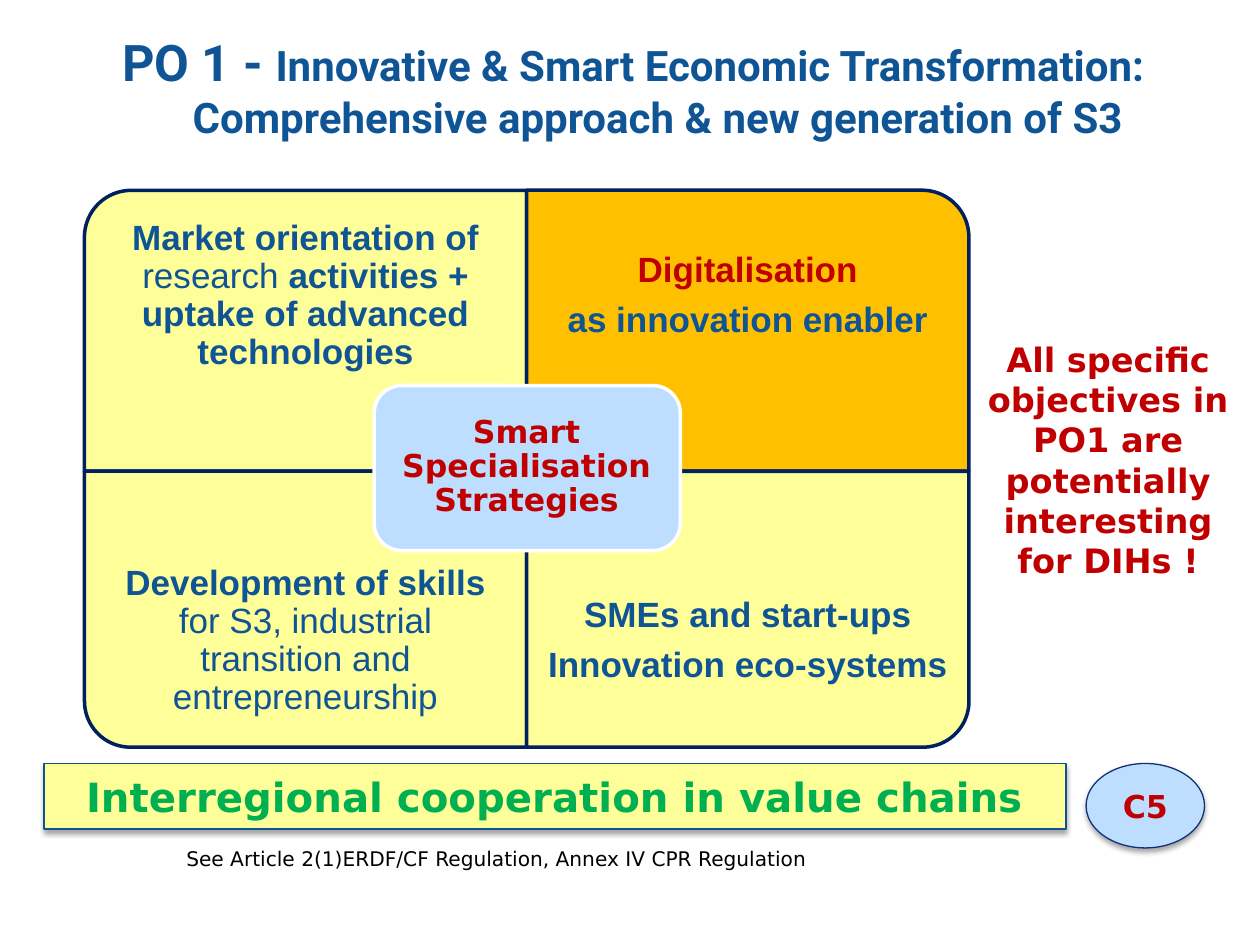
from lxml import etree
from pptx import Presentation
from pptx.dml.color import RGBColor
from pptx.enum.shapes import MSO_SHAPE
from pptx.enum.text import MSO_ANCHOR, MSO_AUTO_SIZE, PP_ALIGN
from pptx.oxml.ns import qn
from pptx.util import Inches, Pt

ROUND_ONE, ROUND = MSO_SHAPE.ROUND_1_RECTANGLE, MSO_SHAPE.ROUNDED_RECTANGLE
RECT, OVAL = MSO_SHAPE.RECTANGLE, MSO_SHAPE.OVAL
CENTER, LEFT = PP_ALIGN.CENTER, PP_ALIGN.LEFT
MIDDLE, TOP = MSO_ANCHOR.MIDDLE, MSO_ANCHOR.TOP

COLORS = {
    "blue": "0F5494", "navy": "002060", "indigo": "133176", "red": "C00000",
    "green": "00B050", "yellow": "FFFF99", "amber": "FFC000",
    "sky": "BDDEFF", "white": "FFFFFF", "black": "000000",
}

# A paragraph is a list of runs: (text, overrides of the box format).
PLAIN = {"bold": False}
TITLE = [[("PO 1 - ", {"size": 28.8}),
          ("Innovative & Smart Economic Transformation: "
           "Comprehensive approach & new generation of S3", {})]]
# column, row, rotation, fill, paragraphs
QUADRANTS = [
    (0, 0, 270, "yellow", [[("Market orientation of ", {}), ("research ", PLAIN),
                            ("activities + uptake of advanced technologies", {})]]),
    (1, 0, 0, "amber", [[("Digitalisation", {"color": "red"})],
                        [("as innovation enabler", {})]]),
    (0, 1, 180, "yellow", [[("Development of skills ", {}),
                            ("for S3, industrial transition and entrepreneurship", PLAIN)]]),
    (1, 1, 90, "yellow", [[("SMEs and start-ups", {})],
                          [("Innovation eco-systems", {})]]),
]
CORE = [[("Smart Specialisation Strategies", {})]]
BANNER = [[("Interregional cooperation in value chains", {})]]
BADGE = [[("C5", {})]]
SOURCE = [[("See Article 2(1)ERDF/CF Regulation, Annex IV CPR Regulation", {})]]
REMARK = [[("All specific objectives in PO1 are potentially interesting for DIHs !", {})]]

TITLE_FONT = {"name": "Roboto", "size": 24, "bold": True, "color": "blue"}
QUAD_FONT = {"name": "Arial", "size": 20, "bold": True, "color": "blue"}
RED_FONT = {"name": "DejaVu Sans", "size": 18, "bold": True, "color": "red"}
BANNER_FONT = {**RED_FONT, "size": 23, "color": "green"}
REMARK_FONT = {**RED_FONT, "size": 19.2}
SOURCE_FONT = {**RED_FONT, "size": 11.5, "bold": False, "color": "black"}

GRID_LEFT, GRID_TOP, CELL_W = 0.67, 1.51, 3.51
ROW_H = (2.23, 2.19)
LABEL_TOP, LABEL_H = (1.51, 4.27), (1.68, 1.64)


def rgb(name):
    return RGBColor.from_string(COLORS[name])


def write(tf, paragraphs, font, align=CENTER, anchor=MIDDLE, inset=None, tight=False):
    """Fill a text frame; tight gives 90 % lines and a gap of 35 % of the size."""
    tf.word_wrap = True
    tf.vertical_anchor = anchor
    if inset is not None:
        for side in ("left", "right", "top", "bottom"):
            setattr(tf, f"margin_{side}", Inches(inset))
    for i, runs in enumerate(paragraphs):
        p = tf.add_paragraph() if i else tf.paragraphs[0]
        p.alignment = align
        if tight:
            p.line_spacing = 0.9
            p.space_after = Pt(0.35 * font["size"])
        for text, overrides in runs:
            r = p.add_run()
            r.text = text
            fmt = {**font, **overrides}
            r.font.color.rgb = rgb(fmt.pop("color"))
            fmt["size"] = Pt(fmt["size"])
            for key, value in fmt.items():
                setattr(r.font, key, value)


def add_shape(s, kind, box, fill, line, width=2.0, rotation=0):
    sp = s.shapes.add_shape(kind, *map(Inches, box))
    sp.shadow.inherit = False
    sp.rotation = rotation
    sp.fill.solid()
    sp.fill.fore_color.rgb = rgb(fill)
    sp.line.color.rgb = rgb(line)
    sp.line.width = Pt(width)
    return sp


def add_text(s, box, paragraphs, font, **layout):
    write(s.shapes.add_textbox(*map(Inches, box)).text_frame, paragraphs, font, **layout)


def drop_shadow(sp):
    effects = sp._element.spPr.find(qn("a:effectLst"))
    shadow = etree.SubElement(effects, qn("a:outerShdw"), blurRad=str(Pt(3.1)),
                              dist=str(Pt(1.8)), dir="5400000", rotWithShape="0")
    color = etree.SubElement(shadow, qn("a:srgbClr"), val=COLORS["black"])
    etree.SubElement(color, qn("a:alpha"), val="35000")


def add_title(s):
    title = s.shapes.title
    title.left, title.top, title.width, title.height = map(Inches, (0.05, 0.16, 9.95, 1.05))
    write(title.text_frame, TITLE, TITLE_FONT)
    title.text_frame.auto_size = MSO_AUTO_SIZE.NONE
    pPr = title.text_frame.paragraphs[0]._p.get_or_add_pPr()
    pPr.set("marL", str(Inches(0.39)))
    pPr.set("indent", str(-Inches(0.39)))


def add_quadrant(s, col, row, rotation, fill, paragraphs):
    """Turn a one-corner rectangle so that its round corner faces outwards."""
    left, top, h = GRID_LEFT + col * CELL_W, GRID_TOP + row * ROW_H[0], ROW_H[row]
    w = CELL_W
    if rotation % 180:  # a quarter turn swaps the sides about the same centre
        left, top, w, h = left + (w - h) / 2, top + (h - w) / 2, h, w
    add_shape(s, ROUND_ONE, (left, top, w, h), fill, "navy", rotation=rotation)
    add_text(s, (GRID_LEFT + col * CELL_W, LABEL_TOP[row], CELL_W, LABEL_H[row]),
             paragraphs, QUAD_FONT, inset=0.16, tight=True)


def main():
    prs = Presentation()
    prs.slide_width, prs.slide_height = Inches(10), Inches(7.5)
    s = prs.slides.add_slide(prs.slide_layouts[5])
    add_title(s)
    for quadrant in QUADRANTS:
        add_quadrant(s, *quadrant)
    add_shape(s, ROUND, (2.97, 3.06, 2.43, 1.31), "sky", "white")
    add_text(s, (3.03, 3.12, 2.3, 1.18), CORE, RED_FONT, inset=0.07, tight=True)

    banner = add_shape(s, RECT, (0.35, 6.06, 8.11, 0.52), "yellow", "blue", 0.75)
    write(banner.text_frame, BANNER, BANNER_FONT)
    add_text(s, (1.38, 6.67, 5.59, 0.3), SOURCE, SOURCE_FONT, align=LEFT, anchor=TOP)
    add_text(s, (7.62, 2.64, 2.35, 2.43), REMARK, REMARK_FONT, anchor=TOP)
    badge = add_shape(s, OVAL, (8.62, 6.06, 0.94, 0.67), "sky", "indigo", 0.75)
    write(badge.text_frame, BADGE, RED_FONT)
    for sp in (banner, badge):
        drop_shadow(sp)
    prs.save("out.pptx")


if __name__ == "__main__":
    main()
